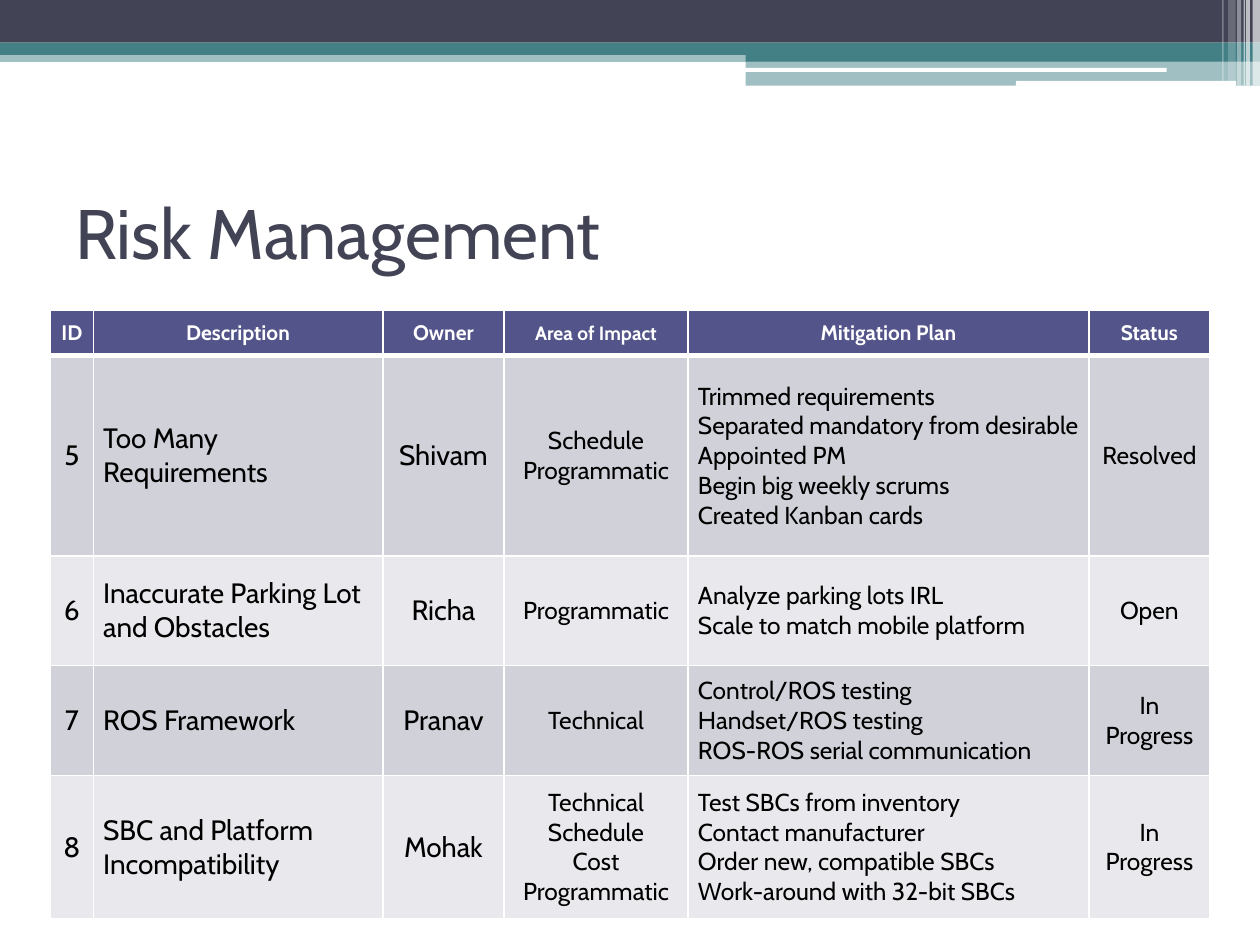
from dataclasses import dataclass

from lxml import etree
from pptx import Presentation
from pptx.dml.color import RGBColor
from pptx.enum import shapes, text
from pptx.oxml import ns
from pptx.util import Cm, Pt


@dataclass(frozen=True)
class Theme:
    font: str = "Cabin"
    navy: str = "424456"
    teal: str = "438086"
    white: str = "FFFFFF"
    black: str = "000000"
    header: str = "53548A"
    bands: tuple = ("D1D1DA", "E9E9ED")
    title_size: int = 40
    header_size: int = 12
    small_header_size: int = 11
    main_size: int = 16
    detail_size: int = 14


T = Theme()
RECT = shapes.MSO_SHAPE.RECTANGLE
ROUND = shapes.MSO_SHAPE.ROUNDED_RECTANGLE

# Column: heading, width in cm, body size, centred
COLUMNS = [
    ("ID", 0.86, T.main_size, True),
    ("Description", 5.84, T.main_size, False),
    ("Owner", 2.44, T.main_size, True),
    ("Area of Impact", 3.71, T.detail_size, True),
    ("Mitigation Plan", 8.08, T.detail_size, False),
    ("Status", 2.44, T.detail_size, True),
]
HEADER_HEIGHT = 0.84

# Row: height in cm, then one text per column (one line per paragraph)
RISKS = [
    (4.04, "5", "Too Many Requirements", "Shivam", "Schedule Programmatic",
     "Trimmed requirements\nSeparated mandatory from desirable\nAppointed PM\n"
     "Begin big weekly scrums\nCreated Kanban cards", "Resolved"),
    (2.21, "6", "Inaccurate Parking Lot and Obstacles", "Richa", "Programmatic",
     "Analyze parking lots IRL\nScale to match mobile platform", "Open"),
    (2.21, "7", "ROS Framework", "Pranav", "Technical",
     "Control/ROS testing\nHandset/ROS testing\nROS-ROS serial communication",
     "In Progress"),
    (2.9, "8", "SBC and Platform Incompatibility", "Mohak",
     "Technical\nSchedule\nCost\nProgrammatic",
     "Test SBCs from inventory\nContact manufacturer\n"
     "Order new, compatible SBCs\nWork-around with 32-bit SBCs", "In Progress"),
]


def add_bar(s, x, y, w, h, color, alpha=100, kind=RECT):
    sp = s.shapes.add_shape(kind, Cm(x), Cm(y), Cm(w), Cm(h))
    sp.shadow.inherit = False
    sp.line.fill.background()
    sp.fill.solid()
    sp.fill.fore_color.rgb = RGBColor.from_string(color)
    if alpha < 100:
        clr = sp.fill._xPr.find(".//" + ns.qn("a:srgbClr"))
        etree.SubElement(clr, ns.qn("a:alpha"), val=str(alpha * 1000))


def write(tf, content, size, color, bold=False, align=text.PP_ALIGN.LEFT):
    for i, line in enumerate(content.split("\n")):
        p = tf.paragraphs[0] if i == 0 else tf.add_paragraph()
        p.alignment = align
        r = p.add_run()
        r.text = line
        r.font.name = T.font
        r.font.size = Pt(size)
        r.font.bold = bold
        r.font.color.rgb = RGBColor.from_string(color)


def add_banner(s, x, y, w):
    # Full-width bands
    add_bar(s, x, y + 1.02, w, 0.23, T.teal, 50)
    add_bar(s, x, y, w, 0.86, T.navy)
    add_bar(s, x, y + 0.86, w, 0.25, T.teal)
    # Step on the right, with white slits
    step = 15.03
    add_bar(s, x + step, y + 0.99, w - step, 0.25, T.teal)
    add_bar(s, x + step, y + 1.23, w - step, 0.5, T.teal, 50)
    add_bar(s, x + 15.01, y + 1.37, 8.51, 0.08, T.white, kind=ROUND)
    add_bar(s, x + 20.48, y + 1.63, 4.44, 0.1, T.white, kind=ROUND)
    # Translucent stripes: distance from right edge, width, height, opacity
    for back, width, height, alpha in [
        (0.15, 0.15, 1.73, 65), (0.28, 0.08, 1.73, 65), (0.33, 0.03, 1.73, 60),
        (0.46, 0.08, 1.73, 40), (0.64, 0.15, 1.63, 20), (0.76, 0.03, 1.63, 30),
    ]:
        add_bar(s, x + w - back, y, width, height, T.white, alpha)


def add_title(s, x, y, w, h):
    sp = s.shapes.add_textbox(Cm(x), Cm(y), Cm(w), Cm(h))
    tf = sp.text_frame
    tf.word_wrap = True
    tf.vertical_anchor = text.MSO_ANCHOR.MIDDLE
    write(tf, "Risk Management", T.title_size, T.navy)


def set_borders(cell, bottom):
    tc_pr = cell._tc.get_or_add_tcPr()
    for i, (side, width) in enumerate(
            [("lnL", 1), ("lnR", 1), ("lnT", 1), ("lnB", bottom)]):
        ln = etree.Element(ns.qn("a:" + side), w=str(Pt(width)))
        fill = etree.SubElement(ln, ns.qn("a:solidFill"))
        etree.SubElement(fill, ns.qn("a:srgbClr"), val=T.white)
        tc_pr.insert(i, ln)


def fill_cell(cell, content, fill, size, color, bold, centred, bottom=1):
    cell.fill.solid()
    cell.fill.fore_color.rgb = RGBColor.from_string(fill)
    cell.vertical_anchor = text.MSO_ANCHOR.MIDDLE
    cell.margin_left = cell.margin_right = Cm(0.2)
    cell.margin_top = cell.margin_bottom = Cm(0.2)
    align = text.PP_ALIGN.CENTER if centred else text.PP_ALIGN.LEFT
    write(cell.text_frame, content, size, color, bold, align)
    set_borders(cell, bottom)


def add_risk_table(s, x, y):
    heights = [HEADER_HEIGHT] + [risk[0] for risk in RISKS]
    widths = [col[1] for col in COLUMNS]
    table = s.shapes.add_table(len(heights), len(widths), Cm(x), Cm(y),
                               Cm(sum(widths)), Cm(sum(heights))).table
    for row, height in zip(table.rows, heights):
        row.height = Cm(height)
    for c, (heading, width, size, centred) in enumerate(COLUMNS):
        table.columns[c].width = Cm(width)
        # Header row
        head_size = (T.small_header_size if heading == "Area of Impact"
                     else T.header_size)
        fill_cell(table.cell(0, c), heading, T.header, head_size, T.white,
                  True, True, bottom=3)
        # Banded risk rows
        for i, (_, *texts) in enumerate(RISKS):
            fill_cell(table.cell(i + 1, c), texts[c], T.bands[i % 2], size,
                      T.black, False, centred)


def main():
    prs = Presentation()
    prs.slide_width, prs.slide_height = Cm(25.4), Cm(19.05)
    s = prs.slides.add_slide(prs.slide_layouts[6])
    add_banner(s, 0, 0, 25.4)
    add_title(s, 1.27, 3.18, 22.86, 2.97)
    add_risk_table(s, 1.02, 6.26)
    prs.save("out.pptx")


if __name__ == "__main__":
    main()
